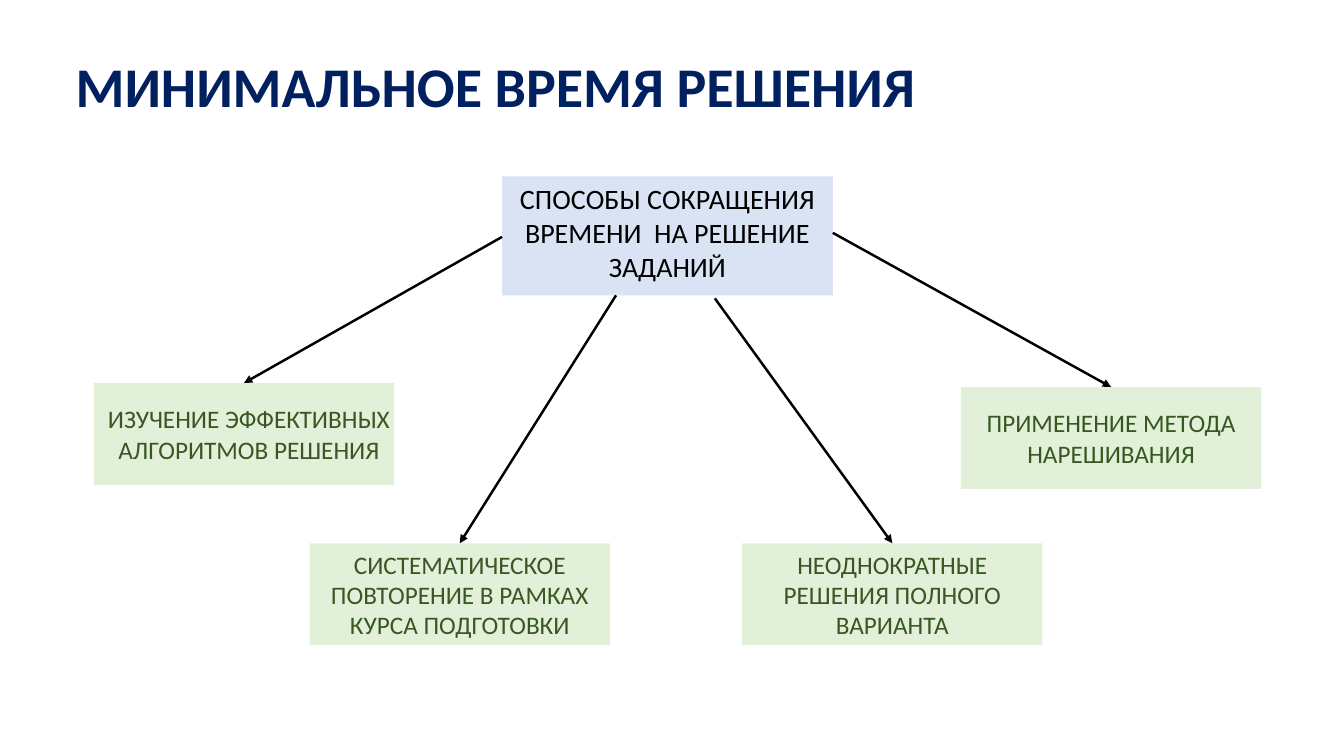
from lxml import etree
from pptx import Presentation
from pptx.dml.color import RGBColor
from pptx.enum.shapes import MSO_CONNECTOR, MSO_SHAPE
from pptx.enum.text import MSO_ANCHOR, MSO_AUTO_SIZE, PP_ALIGN
from pptx.oxml.ns import qn
from pptx.util import Inches, Pt

FONT = "Calibri"
COLORS = {
    "title": "002060",
    "root_fill": "DAE3F3",
    "root_text": "000000",
    "method_fill": "E2F0D9",
    "method_text": "385723",
    "arrow": "000000",
}
METHOD_SIZE = (2.98, 1.01)
EVEN_INSETS = (0.05, 0.05)

# Text, box left and top, left and right insets, arrow start
METHODS = [
    ("ИЗУЧЕНИЕ ЭФФЕКТИВНЫХ АЛГОРИТМОВ РЕШЕНИЯ", (0.93, 3.8), (0.1, 0), (4.98, 2.35)),
    ("ПРИМЕНЕНИЕ МЕТОДА НАРЕШИВАНИЯ", (9.53, 3.84), EVEN_INSETS, (8.26, 2.31)),
    ("СИСТЕМАТИЧЕСКОЕ ПОВТОРЕНИЕ В РАМКАХ КУРСА ПОДГОТОВКИ", (3.07, 5.39),
     EVEN_INSETS, (6.11, 2.93)),
    ("НЕОДНОКРАТНЫЕ РЕШЕНИЯ ПОЛНОГО ВАРИАНТА", (7.36, 5.39), EVEN_INSETS, (7.09, 2.96)),
]


def rgb(name):
    return RGBColor.from_string(COLORS[name])


def write(tf, text, size, color, align, bold=False):
    tf.word_wrap = True
    tf.auto_size = MSO_AUTO_SIZE.NONE
    tf.vertical_anchor = MSO_ANCHOR.MIDDLE
    p = tf.paragraphs[0]
    p.alignment = align
    r = p.add_run()
    r.text = text
    r.font.name = FONT
    r.font.size = Pt(size)
    r.font.bold = bold
    r.font.color.rgb = rgb(color)


def set_title(s, text):
    sp = s.shapes.title
    sp.left, sp.top = Inches(0.65), Inches(0.46)
    sp.width, sp.height = Inches(11.82), Inches(0.77)
    write(sp.text_frame, text, 40, "title", PP_ALIGN.LEFT, bold=True)


def add_box(s, text, pos, box_size, kind, font_size, insets, bottom=0.05):
    sp = s.shapes.add_shape(MSO_SHAPE.RECTANGLE, *map(Inches, pos + box_size))
    sp.shadow.inherit = False
    sp.fill.solid()
    sp.fill.fore_color.rgb = rgb(kind + "_fill")
    sp.line.fill.background()
    tf = sp.text_frame
    tf.margin_left, tf.margin_right = map(Inches, insets)
    tf.margin_bottom = Inches(bottom)
    write(tf, text, font_size, kind + "_text", PP_ALIGN.CENTER)
    return sp


def add_arrow(s, start, box):
    x, y = map(Inches, start)
    cxn = s.shapes.add_connector(MSO_CONNECTOR.STRAIGHT, x, y, x, y)
    cxn.end_connect(box, 0)  # top centre of the box
    cxn.line.color.rgb = rgb("arrow")
    cxn.line.width = Pt(1.75)
    etree.SubElement(cxn.line._get_or_add_ln(), qn("a:tailEnd"), type="triangle")
    etree.SubElement(cxn._element.spPr, qn("a:effectLst"))


def main():
    prs = Presentation()
    prs.slide_width, prs.slide_height = Inches(13.33), Inches(7.5)
    s = prs.slides.add_slide(prs.slide_layouts[5])
    set_title(s, "МИНИМАЛЬНОЕ ВРЕМЯ РЕШЕНИЯ")

    # Root of the scheme
    add_box(s, "СПОСОБЫ СОКРАЩЕНИЯ ВРЕМЕНИ  НА РЕШЕНИЕ ЗАДАНИЙ",
            (4.98, 1.75), (3.28, 1.18), "root", 20, (0.1, 0.1), bottom=0.12)

    # Methods and the arrows leading to them
    for text, pos, insets, start in METHODS:
        box = add_box(s, text, pos, METHOD_SIZE, "method", 18, insets)
        add_arrow(s, start, box)

    prs.save("out.pptx")


if __name__ == "__main__":
    main()
